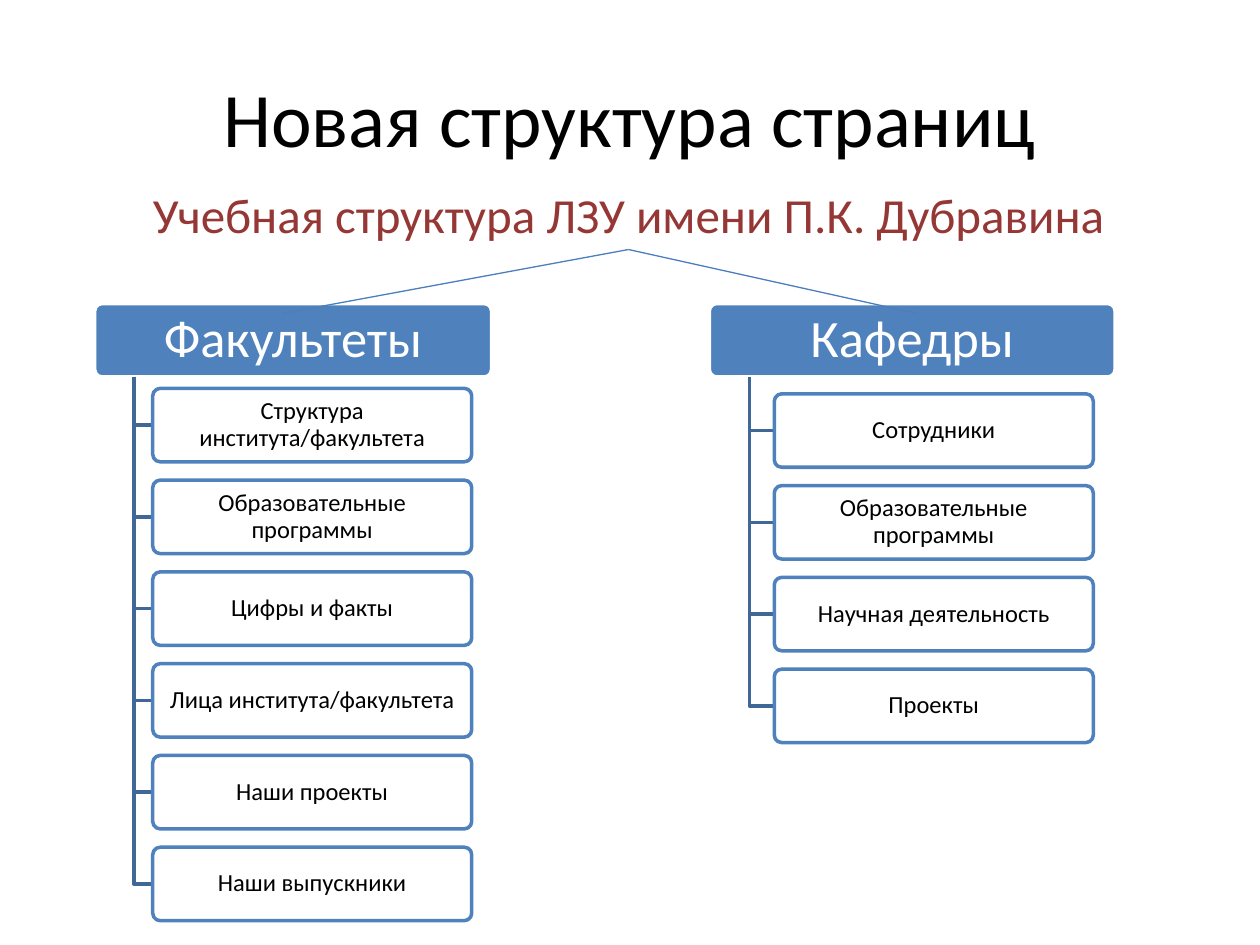
from dataclasses import dataclass

from lxml.etree import SubElement
from pptx import Presentation
from pptx.dml.color import RGBColor
from pptx.enum.shapes import MSO_CONNECTOR, MSO_SHAPE
from pptx.enum.text import MSO_ANCHOR, PP_ALIGN
from pptx.oxml.ns import qn
from pptx.shapes.autoshape import Shape
from pptx.slide import Slide
from pptx.util import Cm, Pt

COLOURS = {
    "black": "000000",
    "white": "FFFFFF",
    "blue": "4F81BD",
    "branch": "3F6797",
    "link": "4B7EBC",
    "red": "953735",
}
HEADER_TOP = 6.12
BOX_HEIGHT = 1.48
CARD_WIDTH = 6.43
CARD_PITCH = 1.85
LINK_START = (12.67, 5.03)
LINK_BOTTOM = 6.32


@dataclass(frozen=True)
class Branch:
    """A headed column of page cards, measured in centimetres."""

    title: str
    left: float
    width: float
    trunk: float
    card_left: float
    card_top: float
    link_x: float
    pages: tuple[str, ...]


BRANCHES = (
    Branch("Факультеты", 1.91, 8.0, 2.7, 3.08, 7.83, 5.69, (
        "Структура института/факультета",
        "Образовательные программы",
        "Цифры и факты",
        "Лица института/факультета",
        "Наши проекты",
        "Наши выпускники",
    )),
    Branch("Кафедры", 14.3, 8.18, 15.11, 15.61, 7.94, 18.49, (
        "Сотрудники",
        "Образовательные программы",
        "Научная деятельность",
        "Проекты",
    )),
)


def colour(name: str) -> RGBColor:
    """Look up a named colour."""
    return RGBColor.from_string(COLOURS[name])


def write_text(box: Shape, text: str, *, size: float, ink: str, spacing: float = 1.0,
               inset: tuple[float, float] = (0.25, 0.13)) -> None:
    """Write one centred paragraph in a box."""
    frame = box.text_frame
    frame.word_wrap = True
    frame.vertical_anchor = MSO_ANCHOR.MIDDLE
    frame.margin_left = frame.margin_right = Cm(inset[0])
    frame.margin_top = frame.margin_bottom = Cm(inset[1])
    para = frame.paragraphs[0]
    para.alignment = PP_ALIGN.CENTER
    para.line_spacing = spacing
    span = para.add_run()
    span.text = text
    span.font.name = "Calibri"
    span.font.size = Pt(size)
    span.font.color.rgb = colour(ink)


def add_box(page: Slide, left: float, top: float, width: float, fill: str, line: str) -> Shape:
    """Add a rounded box of the common height."""
    box = page.shapes.add_shape(MSO_SHAPE.ROUNDED_RECTANGLE, Cm(left), Cm(top),
                                Cm(width), Cm(BOX_HEIGHT))
    box.adjustments[0] = 0.1
    box.shadow.inherit = False
    box.fill.solid()
    box.fill.fore_color.rgb = colour(fill)
    box.line.color.rgb = colour(line)
    box.line.width = Pt(2)
    return box


def add_elbow(page: Slide, left: float, top: float, right: float, bottom: float) -> None:
    """Draw a line down the trunk and across to a card."""
    builder = page.shapes.build_freeform(Cm(left), Cm(top))
    builder.add_line_segments([(Cm(left), Cm(bottom)), (Cm(right), Cm(bottom))], close=False)
    elbow = builder.convert_to_shape()
    elbow.shadow.inherit = False
    elbow.fill.background()
    elbow.line.color.rgb = colour("branch")
    elbow.line.width = Pt(2)


def add_branch(page: Slide, branch: Branch) -> None:
    """Draw a header with its cards and elbows."""
    header = add_box(page, branch.left, HEADER_TOP, branch.width, "blue", "white")
    write_text(header, branch.title, size=30, ink="white", spacing=0.9, inset=(0.16, 0.1))
    for index, text in enumerate(branch.pages):
        top = branch.card_top + index * CARD_PITCH
        add_elbow(page, branch.trunk, HEADER_TOP + BOX_HEIGHT, branch.card_left,
                  top + BOX_HEIGHT / 2)
        card = add_box(page, branch.card_left, top, CARD_WIDTH, "white", "blue")
        write_text(card, text, size=14, ink="black", spacing=0.9, inset=(0.08, 0.05))


def add_link(page: Slide, end_x: float) -> None:
    """Join the subtitle to a branch header."""
    link = page.shapes.add_connector(MSO_CONNECTOR.STRAIGHT, Cm(LINK_START[0]),
                                     Cm(LINK_START[1]), Cm(end_x), Cm(LINK_BOTTOM))
    link.line.color.rgb = colour("link")
    link.line.width = Pt(0.75)
    SubElement(link._element.spPr, qn("a:effectLst"))


def main() -> None:
    """Build and save the deck."""
    deck = Presentation()
    deck.slide_width, deck.slide_height = Cm(25.4), Cm(19.05)
    page = deck.slides.add_slide(deck.slide_layouts[6])
    title = page.shapes.add_textbox(Cm(1.27), Cm(0.76), Cm(22.86), Cm(3.18))
    write_text(title, "Новая структура страниц", size=44, ink="black")
    for branch in BRANCHES:
        add_branch(page, branch)
    subtitle = page.shapes.add_textbox(Cm(1.92), Cm(3.58), Cm(21.5), Cm(1.45))
    write_text(subtitle, "Учебная структура ЛЗУ имени П.К. Дубравина", size=28, ink="red")
    for branch in BRANCHES:
        add_link(page, branch.link_x)
    deck.save("out.pptx")


if __name__ == "__main__":
    main()
